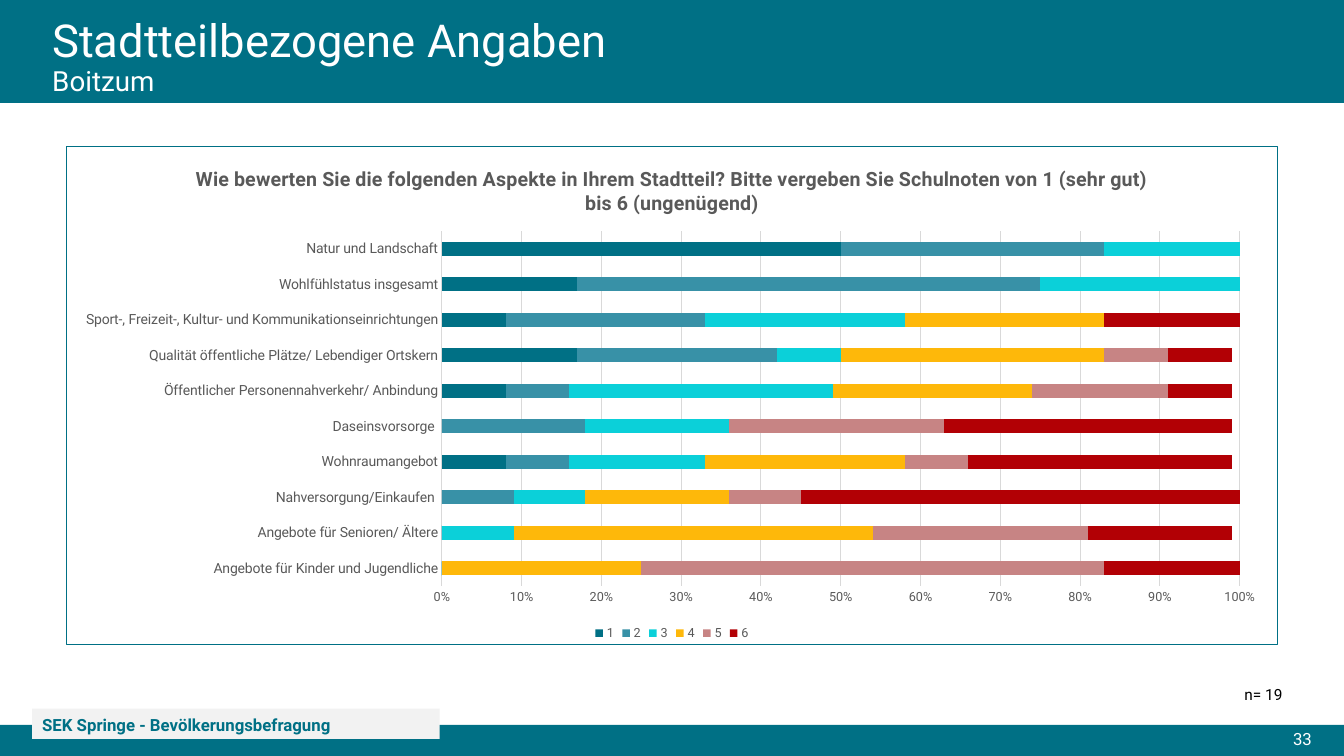
from dataclasses import dataclass

from lxml import etree
from pptx import Presentation
from pptx.chart.chart import Chart
from pptx.chart.data import CategoryChartData
from pptx.dml.color import RGBColor as RGB
from pptx.enum.chart import XL_CHART_TYPE as ChartType
from pptx.enum.chart import XL_LEGEND_POSITION as LegendPos
from pptx.enum.chart import XL_TICK_MARK as Tick
from pptx.enum.shapes import MSO_SHAPE as Shape
from pptx.enum.text import MSO_ANCHOR as Anchor
from pptx.enum.text import PP_ALIGN as Align
from pptx.oxml import parse_xml
from pptx.oxml.ns import nsdecls, qn
from pptx.slide import Slide
from pptx.text.text import Font
from pptx.util import Inches, Pt


@dataclass(frozen=True)
class Theme:
    """Colours and type sizes."""
    font: str = "Roboto"
    teal: str = "007085"
    white: str = "FFFFFF"
    black: str = "000000"
    pale: str = "F2F2F2"
    grey: str = "595959"
    grid: str = "D9D9D9"
    title: float = 32.4
    subtitle: float = 19.8
    chart_title: float = 14
    footer: float = 12
    note: float = 11
    category: float = 10
    scale: float = 9


@dataclass(frozen=True)
class Box:
    """Position and size in inches."""
    left: float
    top: float
    width: float
    height: float

    def emu(self) -> list[int]:
        """Return the box as lengths."""
        return [Inches(v) for v in (self.left, self.top, self.width, self.height)]


@dataclass(frozen=True)
class Grade:
    """One school grade with its shares per aspect."""
    name: str
    color: str
    shares: tuple[float, ...]


@dataclass(frozen=True)
class Bar:
    """A filled band."""
    box: Box
    color: str


T = Theme()
CHART_BOX = Box(0.65, 1.45, 12.03, 4.95)
PLOT_BOX = Box(4.38, 2.29, 7.92, 3.53)
FOOTER_BOX = Box(0.32, 7.03, 4.04, 0.3)
BARS = (
    Bar(Box(0, 0, 13.33, 1.02), T.teal),
    Bar(Box(0, 7.19, 13.33, 0.31), T.teal),
    Bar(FOOTER_BOX, T.pale),
)
QUESTION = ("Wie bewerten Sie die folgenden Aspekte in Ihrem Stadtteil? "
            "Bitte vergeben Sie Schulnoten von 1 (sehr gut) bis 6 (ungenügend)")
ASPECTS = (
    "Angebote für Kinder und Jugendliche",
    "Angebote für Senioren/ Ältere",
    "Nahversorgung/Einkaufen ",
    "Wohnraumangebot",
    "Daseinsvorsorge ",
    "Öffentlicher Personennahverkehr/ Anbindung",
    "Qualität öffentliche Plätze/ Lebendiger Ortskern",
    "Sport-, Freizeit-, Kultur- und Kommunikationseinrichtungen".replace("richt", "richt"),
    "Wohlfühlstatus insgesamt",
    "Natur und Landschaft",
)
GRADES = (
    Grade("1", "007085", (0, 0, 0, 0.08, 0, 0.08, 0.17, 0.08, 0.17, 0.5)),
    Grade("2", "3891A7", (0, 0, 0.09, 0.08, 0.18, 0.08, 0.25, 0.25, 0.58, 0.33)),
    Grade("3", "0BD0D9", (0, 0.09, 0.09, 0.17, 0.18, 0.33, 0.08, 0.25, 0.25, 0.17)),
    Grade("4", "FEB80A", (0.25, 0.45, 0.18, 0.25, 0, 0.25, 0.33, 0.25, 0, 0)),
    Grade("5", "C78484", (0.58, 0.27, 0.09, 0.08, 0.27, 0.17, 0.08, 0, 0, 0)),
    Grade("6", "B20005", (0.17, 0.18, 0.55, 0.33, 0.36, 0.08, 0.08, 0.17, 0, 0)),
)


def style(font: Font, size: float, color: str, bold: bool = False) -> None:
    """Set typeface, size, colour and weight."""
    font.name, font.size, font.bold = T.font, Pt(size), bold
    font.color.rgb = RGB.from_string(color)


def add_bar(s: Slide, bar: Bar) -> None:
    """Draw a filled band without outline."""
    sp = s.shapes.add_shape(Shape.RECTANGLE, *bar.box.emu())
    sp.shadow.inherit = False
    sp.fill.solid()
    sp.fill.fore_color.rgb = RGB.from_string(bar.color)
    sp.line.fill.background()


def add_text(s: Slide, text: str, box: Box, *, size: float, color: str,
             bold: bool = False, align: Align = Align.LEFT, anchor: Anchor = Anchor.MIDDLE,
             spacing: float = 1.0, second: str = "", second_size: float = 0) -> None:
    """Write a paragraph with an optional second line of another size."""
    tf = s.shapes.add_textbox(*box.emu()).text_frame
    tf.word_wrap, tf.vertical_anchor = True, anchor
    p = tf.paragraphs[0]
    p.alignment, p.line_spacing = align, spacing
    r = p.add_run()
    r.text = text
    style(r.font, size, color, bold)
    if second:
        p.add_line_break()
        r = p.add_run()
        r.text = second
        style(r.font, second_size, color, bold)


def place_plot(chart: Chart) -> None:
    """Fix the inner plot area as fractions of the chart."""
    fractions = {
        "x": (PLOT_BOX.left - CHART_BOX.left) / CHART_BOX.width,
        "y": (PLOT_BOX.top - CHART_BOX.top) / CHART_BOX.height,
        "w": PLOT_BOX.width / CHART_BOX.width,
        "h": PLOT_BOX.height / CHART_BOX.height,
    }
    area = chart._chartSpace.chart.plotArea
    for old in area.findall(qn("c:layout")):
        area.remove(old)
    layout = parse_xml(f"<c:layout {nsdecls('c')}><c:manualLayout/></c:layout>")
    entries = {"layoutTarget": "inner", "xMode": "edge", "yMode": "edge"}
    entries.update({key: f"{value:.4f}" for key, value in fractions.items()})
    for tag, value in entries.items():
        etree.SubElement(layout[0], qn(f"c:{tag}")).set("val", value)
    area.insert(0, layout)


def add_border(chart: Chart) -> None:
    """Outline the chart area."""
    chart._chartSpace.chart.addnext(parse_xml(
        f"<c:spPr {nsdecls('c', 'a')}><a:noFill/><a:ln w=\"{Pt(0.75)}\"><a:solidFill>"
        f"<a:srgbClr val=\"{T.teal}\"/></a:solidFill></a:ln></c:spPr>"))


def add_grade_chart(s: Slide) -> None:
    """Draw the stacked bars of grades per aspect."""
    data = CategoryChartData(number_format="0%")
    data.categories = ASPECTS
    for grade in GRADES:
        data.add_series(grade.name, grade.shares)
    chart = s.shapes.add_chart(ChartType.BAR_STACKED, *CHART_BOX.emu(), data).chart
    style(chart.font, T.category, T.black)
    chart.has_title = True
    p = chart.chart_title.text_frame.paragraphs[0]
    r = p.add_run()
    r.text = QUESTION
    style(r.font, T.chart_title, T.grey, True)
    chart.chart_title.include_in_layout = False
    chart.has_legend = True
    chart.legend.position = LegendPos.BOTTOM
    chart.legend.include_in_layout = False
    style(chart.legend.font, T.scale, T.grey)
    plot = chart.plots[0]
    plot.gap_width, plot.overlap, plot.vary_by_categories = 150, 100, False
    for series, grade in zip(plot.series, GRADES):
        series.format.fill.solid()
        series.format.fill.fore_color.rgb = RGB.from_string(grade.color)
    cat, val = chart.category_axis, chart.value_axis
    for axis, size in ((cat, T.category), (val, T.scale)):
        axis.major_tick_mark = axis.minor_tick_mark = Tick.NONE
        style(axis.tick_labels.font, size, T.grey)
    val.minimum_scale, val.maximum_scale, val.major_unit = 0, 1, 0.1
    val.tick_labels.number_format = "0%"
    val.tick_labels.number_format_is_linked = False
    val.format.line.fill.background()
    for line in (cat.format.line, val.major_gridlines.format.line):
        line.color.rgb, line.width = RGB.from_string(T.grid), Pt(0.75)
    place_plot(chart)
    add_border(chart)


def main() -> None:
    """Build and save the slide."""
    prs = Presentation()
    prs.slide_width, prs.slide_height = Inches(13.33), Inches(7.5)
    s = prs.slides.add_slide(prs.slide_layouts[6])
    for bar in BARS:
        add_bar(s, bar)
    add_text(s, "33", Box(8.72, 7.18, 4.39, 0.3), size=T.footer, color=T.white, align=Align.RIGHT)
    add_text(s, "SEK Springe - Bevölkerungsbefragung", FOOTER_BOX, size=T.footer,
             color=T.teal, bold=True, spacing=1.07)
    add_text(s, "Stadtteilbezogene Angaben", Box(0.42, 0.21, 11.5, 0.73), size=T.title,
             color=T.white, spacing=0.9, second="Boitzum", second_size=T.subtitle)
    add_text(s, "n= 19", Box(12.21, 6.75, 0.61, 0.29), size=T.note, color=T.black,
             align=Align.RIGHT, anchor=Anchor.TOP)
    add_grade_chart(s)
    prs.save("out.pptx")


if __name__ == "__main__":
    main()
